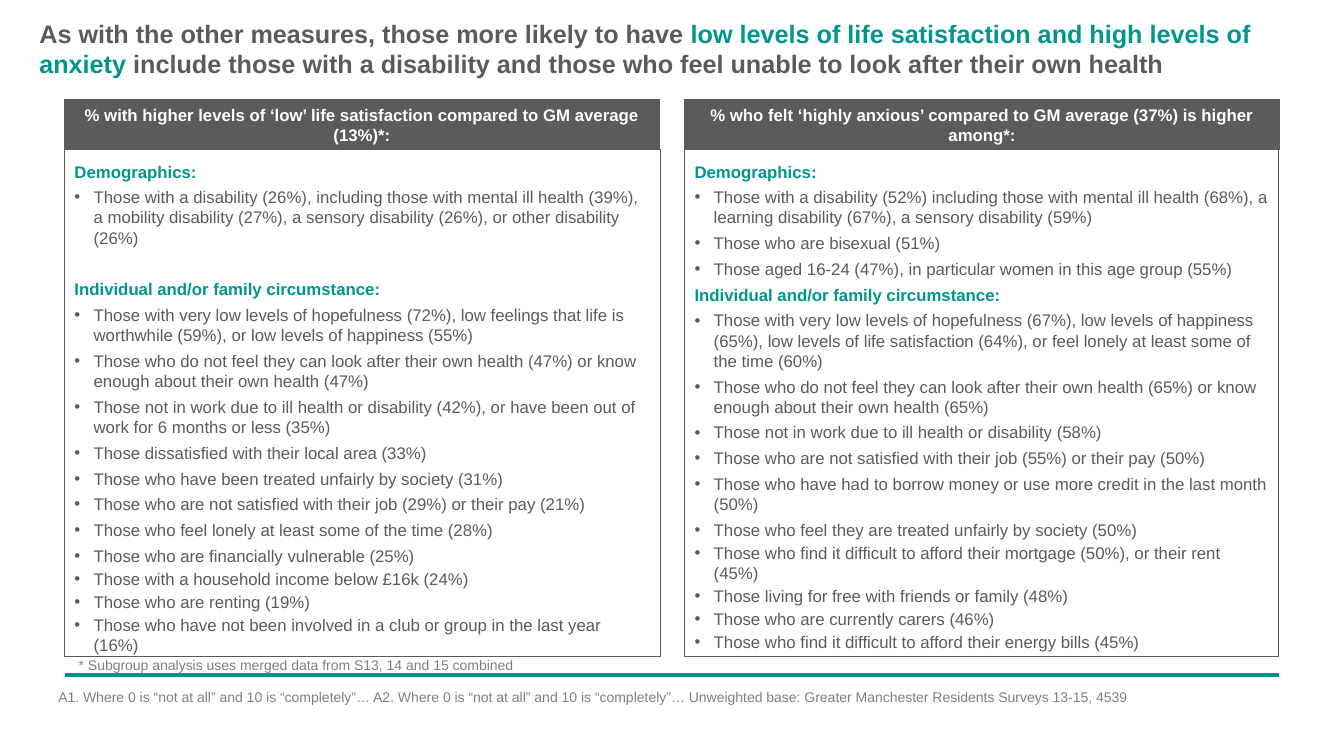
"""Build the slide comparing groups with low life satisfaction and high anxiety."""
from lxml.etree import SubElement
from pptx import Presentation
from pptx.dml.color import RGBColor
from pptx.enum.shapes import MSO_CONNECTOR, MSO_SHAPE
from pptx.enum.text import MSO_ANCHOR, MSO_AUTO_SIZE, PP_ALIGN
from pptx.oxml.ns import qn
from pptx.util import Inches, Pt

GREY = RGBColor(0x5C, 0x5B, 0x5A)
TEAL = RGBColor(0x00, 0x96, 0x90)
NOTE_GREY = RGBColor(0x80, 0x80, 0x80)
WHITE = RGBColor(0xFF, 0xFF, 0xFF)

TITLE_RUNS = [
    ("As with the other measures, those more likely to have ", GREY),
    ("low levels of life satisfaction and high levels of anxiety ", TEAL),
    ("include those with a disability and those who feel unable to look after their own health", GREY),
]

SATISFACTION_SECTIONS = {
    "Demographics:": [
        "Those with a disability (26%), including those with mental ill health (39%), a mobility disability (27%), a sensory disability (26%), or other disability (26%)",
    ],
    "Individual and/or family circumstance:": [
        "Those with very low levels of hopefulness (72%), low feelings that life is worthwhile (59%), or low levels of happiness (55%)",
        "Those who do not feel they can look after their own health (47%) or know enough about their own health (47%)",
        "Those not in work due to ill health or disability (42%), or have been out of work for 6 months or less (35%)",
        "Those dissatisfied with their local area (33%)",
        "Those who have been treated unfairly by society (31%)",
        "Those who are not satisfied with their job (29%) or their pay (21%)",
        "Those who feel lonely at least some of the time (28%)",
        "Those who are financially vulnerable (25%)",
        "Those with a household income below £16k (24%)",
        "Those who are renting (19%)",
        "Those who have not been involved in a club or group in the last year (16%)",
    ],
}

ANXIETY_SECTIONS = {
    "Demographics:": [
        "Those with a disability (52%) including those with mental ill health (68%), a learning disability (67%), a sensory disability (59%)",
        "Those who are bisexual (51%)",
        "Those aged 16-24 (47%), in particular women in this age group (55%)",
    ],
    "Individual and/or family circumstance:": [
        "Those with very low levels of hopefulness (67%), low levels of happiness (65%), low levels of life satisfaction (64%), or feel lonely at least some of the time (60%)",
        "Those who do not feel they can look after their own health (65%) or know enough about their own health (65%)",
        "Those not in work due to ill health or disability (58%)",
        "Those who are not satisfied with their job (55%) or their pay (50%)",
        "Those who have had to borrow money or use more credit in the last month (50%)",
        "Those who feel they are treated unfairly by society (50%)",
        "Those who find it difficult to afford their mortgage (50%), or their rent (45%)",
        "Those living for free with friends or family (48%)",
        "Those who are currently carers (46%)",
        "Those who find it difficult to afford their energy bills (45%)",
    ],
}

COLUMNS = [
    (0.64, 5.91, "% with higher levels of ‘low’ life satisfaction compared to GM average (13%)*:",
     SATISFACTION_SECTIONS, 22.5, 7),
    (6.79, 5.89, "% who felt ‘highly anxious’ compared to GM average (37%) is higher among*:",
     ANXIETY_SECTIONS, 4, 5),
]

NOTES = [
    (0.64, 6.46, 5.19, 0.26, 0.14, "* Subgroup analysis uses merged data from S13, 14 and 15 combined"),
    (0.48, 6.78, 11.6, 0.58, 0.1,
     "A1. Where 0 is “not at all” and 10 is “completely”… A2. Where 0 is “not at all” and 10 is “completely”… Unweighted base: Greater Manchester Residents Surveys 13-15, 4539"),
]


def style_font(font, size, color, bold=False):
    font.name = "Arial"
    font.size = Pt(size)
    font.bold = bold
    font.color.rgb = color


def add_box(slide, left, top, width, height):
    shape = slide.shapes.add_shape(
        MSO_SHAPE.RECTANGLE, Inches(left), Inches(top), Inches(width), Inches(height))
    shape.shadow.inherit = False
    shape.line.color.rgb = GREY
    shape.line.width = Pt(0.75)
    shape.text_frame.word_wrap = True
    return shape


presentation = Presentation()
presentation.slide_width = Inches(13.33)
presentation.slide_height = Inches(7.5)
slide = presentation.slides.add_slide(presentation.slide_layouts[5])

footer_line = slide.shapes.add_connector(
    MSO_CONNECTOR.STRAIGHT, Inches(0.64), Inches(6.7), Inches(12.69), Inches(6.7))
footer_line.line.color.rgb = TEAL
footer_line.line.width = Pt(3)
SubElement(footer_line._element.spPr, qn("a:effectLst"))

title = slide.shapes.title
title.left, title.top = Inches(0.39), Inches(0.18)
title.width, title.height = Inches(12.56), Inches(0.61)
title_frame = title.text_frame
title_frame.margin_left = title_frame.margin_right = Inches(0)
title_frame.margin_top = title_frame.margin_bottom = Inches(0)
title_frame.word_wrap = True
title_frame.auto_size = MSO_AUTO_SIZE.NONE
title_frame.vertical_anchor = MSO_ANCHOR.TOP
title_frame.paragraphs[0].alignment = PP_ALIGN.LEFT
for text, color in TITLE_RUNS:
    run = title_frame.paragraphs[0].add_run()
    run.text = text
    style_font(run.font, 18, color, True)

for left, panel_width, heading, sections, section_gap, tight_from in COLUMNS:
    header = add_box(slide, left, 0.99, 5.9, 0.49)
    header.fill.solid()
    header.fill.fore_color.rgb = GREY
    header.text_frame.text = heading
    header.text_frame.vertical_anchor = MSO_ANCHOR.MIDDLE
    paragraph = header.text_frame.paragraphs[0]
    paragraph.alignment = PP_ALIGN.CENTER
    paragraph.space_after = Pt(4)
    style_font(paragraph.runs[0].font, 12, WHITE, True)

    panel = add_box(slide, left, 1.48, panel_width, 5.03)
    panel.fill.background()
    frame = panel.text_frame
    frame.vertical_anchor = MSO_ANCHOR.TOP
    frame.margin_top = Inches(0.12)
    paragraph = frame.paragraphs[0]
    for section, bullets in sections.items():
        if paragraph.text:
            paragraph.space_after = Pt(section_gap)
            paragraph = frame.add_paragraph()
        paragraph.text = section
        paragraph.alignment = PP_ALIGN.LEFT
        paragraph.space_after = Pt(4)
        style_font(paragraph.runs[0].font, 12, TEAL, True)
        for index, bullet in enumerate(bullets):
            paragraph = frame.add_paragraph()
            paragraph.text = bullet
            paragraph.alignment = PP_ALIGN.LEFT
            paragraph.space_after = Pt(2 if index >= tight_from else 4)
            properties = paragraph._p.get_or_add_pPr()
            properties.set("marL", str(Inches(0.19)))
            properties.set("indent", str(-Inches(0.19)))
            SubElement(properties, qn("a:buFont"), typeface="Arial")
            SubElement(properties, qn("a:buChar"), char="•")
            style_font(paragraph.runs[0].font, 12, GREY)

for left, top, width, height, margin, text in NOTES:
    note = slide.shapes.add_textbox(Inches(left), Inches(top), Inches(width), Inches(height))
    note.text_frame.word_wrap = True
    note.text_frame.margin_left = Inches(margin)
    note.text_frame.text = text
    style_font(note.text_frame.paragraphs[0].runs[0].font, 10, NOTE_GREY)

presentation.save("out.pptx")
